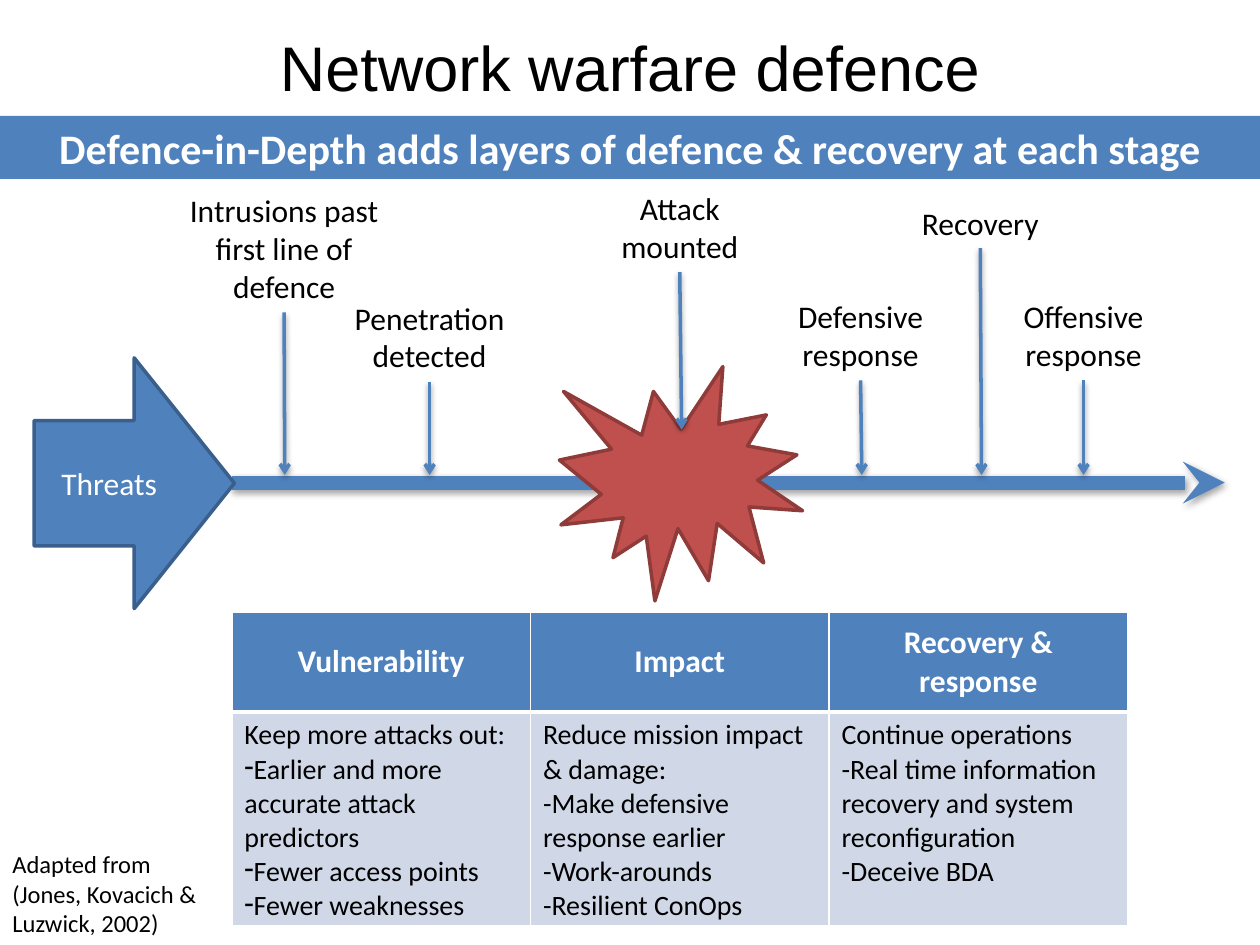
from dataclasses import dataclass

from lxml import etree
from pptx import Presentation
from pptx import util as u
from pptx.dml.color import RGBColor
from pptx.enum import shapes as sh, text as tx
from pptx.oxml import ns

BLUE = RGBColor(0x4F, 0x81, 0xBD)
NAVY = RGBColor(0x3A, 0x5F, 0x8C)
RED = RGBColor(0xC0, 0x50, 0x4D)
DARK = RGBColor(0x8E, 0x3B, 0x39)
PALE = RGBColor(0xD0, 0xD8, 0xE8)
BLACK = RGBColor(0, 0, 0)
WHITE = RGBColor(255, 255, 255)

LEFT, MID = tx.PP_ALIGN.LEFT, tx.PP_ALIGN.CENTER
AXIS, TIP = 383, 377  # height of the time line and of the arrow tips


@dataclass
class Stage:
    text: str
    x: int
    y: int
    w: int
    h: int
    end: tuple[int, int]
    wrap: bool = True


@dataclass
class Column:
    head: str
    lines: list[str]
    bullet: bool = False


STAGES = [
    Stage("Intrusions past first line of defence", 136, 147, 179, 101, (226, TIP)),
    Stage("Defensive response", 610, 231, 146, 71, (684, TIP)),
    Stage("Attack mounted", 477, 145, 125, 71, (541, 341)),
    Stage("Penetration\ndetected", 271, 232, 140, 71, (341, TIP), False),
    Stage("Recovery", 721, 157, 114, 40, (779, TIP), False),
    Stage("Offensive response", 787, 231, 146, 71, (860, TIP)),
]
COLUMNS = [
    Column("Vulnerability", [
        "Keep more attacks out:", "Earlier and more accurate attack predictors",
        "Fewer access points", "Fewer weaknesses"], True),
    Column("Impact", [
        "Reduce mission impact & damage:", "-Make defensive response earlier",
        "-Work-arounds", "-Resilient ConOps"]),
    Column("Recovery & response", [
        "Continue operations",
        "-Real time information recovery and system reconfiguration",
        "-Deceive BDA"]),
]


def px(n: int) -> u.Emu:
    """One px is a hundredth of an inch."""
    return u.Emu(n * 9144)


def sub(node, tag: str, **attrs):
    return etree.SubElement(node, ns.qn(tag), attrs)


def write(frame, words: str, size: int, color: RGBColor, align=MID,
          bold: bool = False, face: str = "Calibri") -> None:
    frame.text = words
    for para in frame.paragraphs:
        para.alignment = align
        for run in para.runs:
            font = run.font
            font.size, font.name, font.bold = u.Pt(size), face, bold
            font.color.rgb = color


def label(words: str, box: tuple, size: int, align=MID, wrap: bool = True):
    item = slide.shapes.add_textbox(*map(px, box))
    frame = item.text_frame
    frame.word_wrap = wrap
    frame.auto_size = tx.MSO_AUTO_SIZE.SHAPE_TO_FIT_TEXT
    write(frame, words, size, BLACK, align)
    return item


def block(kind, box: tuple, fill: RGBColor, edge: RGBColor | None = None):
    item = slide.shapes.add_shape(kind, *map(px, box))
    item.shadow.inherit = False
    item.fill.solid()
    item.fill.fore_color.rgb = fill
    if edge is None:
        item.line.fill.background()
    else:
        item.line.color.rgb = edge
        item.line.width = u.Pt(2)
    return item


def arrow(start: tuple, end: tuple, width: int, head: str):
    item = slide.shapes.add_connector(
        sh.MSO_CONNECTOR.STRAIGHT, *map(px, start + end))
    item.line.color.rgb = BLUE
    item.line.width = u.Pt(width)
    sub(item.line._get_or_add_ln(), "a:tailEnd", type=head)
    # soft shadow straight below
    glow = sub(sub(item._element.spPr, "a:effectLst"), "a:outerShdw",
               blurRad="40000", dist="21000", dir="5400000", rotWithShape="0")
    sub(sub(glow, "a:srgbClr", val="000000"), "a:alpha", val="37000")
    return item


def paint(cell, fill: RGBColor, base: int) -> None:
    """White borders, the lower one base points wide, then the fill."""
    props = cell._tc.get_or_add_tcPr()
    for side in "LRTB":
        width = u.Pt(base if side == "B" else 1)
        line = sub(props, f"a:ln{side}", w=str(width))
        sub(sub(line, "a:solidFill"), "a:srgbClr", val=str(WHITE))
    cell.fill.solid()
    cell.fill.fore_color.rgb = fill


def dash(para) -> None:
    props = para._p.get_or_add_pPr()
    props.set("marL", "0")
    props.set("indent", "0")
    sub(props, "a:buFontTx")
    sub(props, "a:buChar", char="-")


prs = Presentation()
prs.slide_width, prs.slide_height = px(1000), px(750)
slide = prs.slides.add_slide(prs.slide_layouts[5])

# Title
title = slide.shapes.title
title.left, title.top, title.width, title.height = map(px, (0, 17, 1000, 71))
title.text_frame.auto_size = tx.MSO_AUTO_SIZE.SHAPE_TO_FIT_TEXT
write(title.text_frame, "Network warfare defence", 36, BLACK, face="Arial")

# Time line with its stages
arrow((184, AXIS), (972, AXIS), 8, "stealth")
tags = [label(s.text, (s.x, s.y, s.w, s.h), 18, wrap=s.wrap) for s in STAGES]

# Threats and the attack
threat = block(sh.MSO_SHAPE.RIGHT_ARROW, (27, 284, 159, 199), BLUE, NAVY)
threat.text_frame.vertical_anchor = tx.MSO_ANCHOR.MIDDLE
write(threat.text_frame, "Threats", 18, WHITE)
block(sh.MSO_SHAPE.EXPLOSION1, (444, 291, 193, 186), RED, DARK)

# Arrows from the stages down to the time line
for stage, tag in zip(STAGES, tags):
    start = (stage.x + stage.w // 2, stage.y + stage.h)
    arrow(start, stage.end, 2, "arrow").begin_connect(tag, 2)

# Table of defence layers
table = slide.shapes.add_table(
    2, len(COLUMNS), *map(px, (184, 486, 711, 249))).table
table.rows[0].height, table.rows[1].height = px(79), px(170)
for i, col in enumerate(COLUMNS):
    table.columns[i].width = px(237)
    head, body = table.cell(0, i), table.cell(1, i)
    paint(head, BLUE, 3)
    paint(body, PALE, 1)
    head.vertical_anchor = tx.MSO_ANCHOR.MIDDLE
    write(head.text_frame, col.head, 18, WHITE, bold=True)
    write(body.text_frame, "\n".join(col.lines), 16, BLACK, LEFT)
    if col.bullet:
        for para in body.text_frame.paragraphs[1:]:
            dash(para)

# Banner and credit
banner = block(sh.MSO_SHAPE.RECTANGLE, (0, 92, 1000, 50), BLUE)
banner.text_frame.auto_size = tx.MSO_AUTO_SIZE.SHAPE_TO_FIT_TEXT
write(banner.text_frame,
      "Defence-in-Depth adds layers of defence & recovery at each stage",
      24, WHITE, bold=True)
label("Adapted from (Jones, Kovacich & Luzwick, 2002)",
      (0, 669, 175, 81), 14, LEFT)

prs.save("out.pptx")
